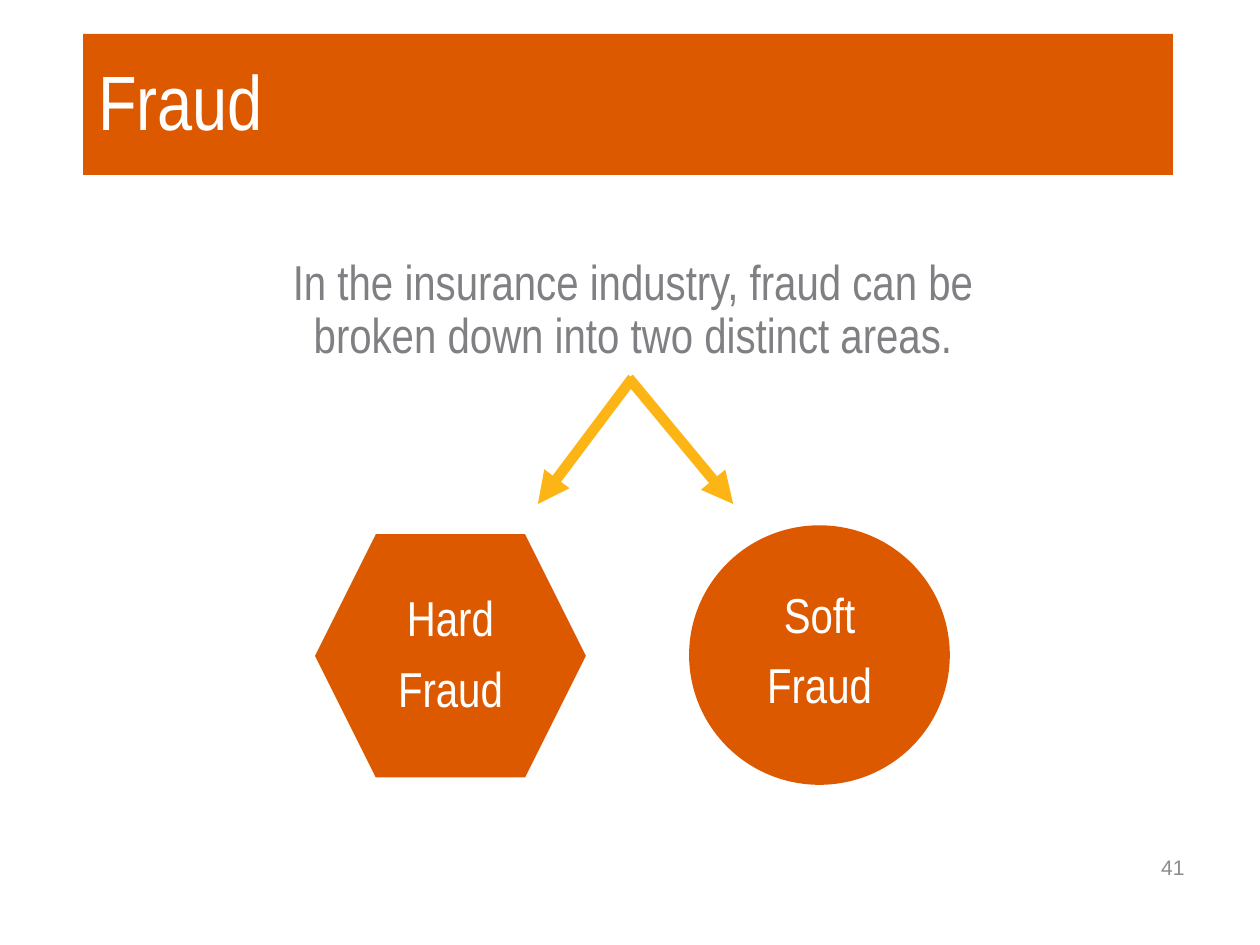
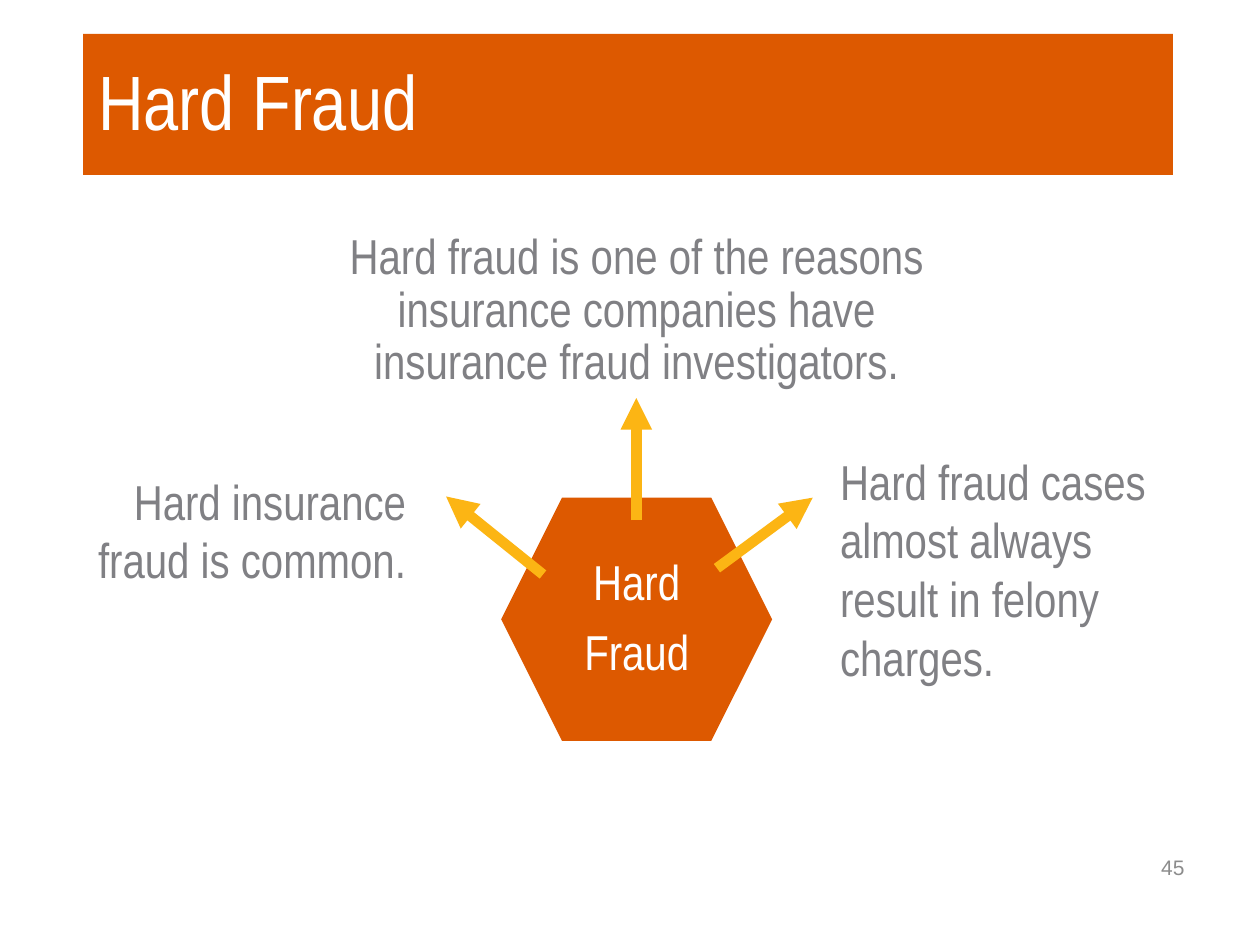
"""Build two slides on insurance fraud: its two areas, and hard fraud in detail."""
from lxml.etree import SubElement
from pptx import Presentation
from pptx.dml.color import RGBColor
from pptx.enum.shapes import MSO_CONNECTOR as Connector, MSO_SHAPE as Shape
from pptx.enum.text import MSO_ANCHOR as Anchor, PP_ALIGN as Align
from pptx.oxml.ns import qn
from pptx.util import Pt

ORANGE = RGBColor(0xDD, 0x59, 0x00)
GOLD = RGBColor(0xFC, 0xB5, 0x14)
GREY = RGBColor(0x80, 0x80, 0x84)
PALE_GREY = RGBColor(0x8C, 0x8C, 0x8C)
WHITE = RGBColor(0xFF, 0xFF, 0xFF)

BAND = (47.5, 19.4, 622.8, 80.6)
TITLE = (49, 11.5, 620.6, 98)
PAGE_NUMBER = (516.2, 481, 167.8, 28.8)
HEXAGON_SIZE = (154.8, 139)
CIRCLE_SIZE = (149, 148.3)
LABEL_SIZE = (185.8, 81.4)
BOTTOM = 2

SLIDES = [
    {
        "title": "Fraud",
        "number": "41",
        "lead": "In the insurance industry, fraud can be broken down into two distinct areas.",
        "lead_area": (135.4, 144, 452.2, 81.4),
        "figures": [
            (Shape.HEXAGON, (180, 305.3), HEXAGON_SIZE, ["Hard", "Fraud"], 336.2),
            (Shape.OVAL, (393.8, 300.2), CIRCLE_SIZE, ["Soft", "Fraud"], 334.1),
        ],
        "arrows": [((359.3, 216), (419, 288)), ((361.4, 216), (307.4, 288))],
        "arrow_to_lead": None,
        "notes": [],
    },
    {
        "title": "Hard Fraud",
        "number": "45",
        "lead": "Hard fraud is one of the reasons insurance companies have "
                "insurance fraud investigators.",
        "lead_area": (169.9, 128.9, 387.4, 98.6),
        "figures": [
            (Shape.HEXAGON, (286.4, 284.4), HEXAGON_SIZE, ["Hard", "Fraud"], 315.4),
        ],
        "arrows": [((409.7, 324.7), (464.4, 284.4)), ((310.3, 328.3), (254.9, 283.7))],
        "arrow_to_lead": (363.6, 297.4),
        "notes": [
            ("Hard fraud cases almost always result in felony charges.",
             (473, 254.2, 208, 143.3), Align.LEFT),
            ("Hard insurance fraud is common.", (40.3, 265.7, 198.7, 74.9), Align.RIGHT),
        ],
    },
]


def points(values):
    return [Pt(value) for value in values]


def add_text(slide, paragraphs, area, size=28, color=GREY, font="Arial Narrow",
             align=Align.CENTER, anchor=Anchor.TOP, spacing=0.9):
    box = slide.shapes.add_textbox(*points(area))
    frame = box.text_frame
    frame.word_wrap = True
    frame.vertical_anchor = anchor
    for index, text in enumerate(paragraphs):
        para = frame.paragraphs[0] if index == 0 else frame.add_paragraph()
        para.alignment = align
        para.line_spacing = spacing
        if index:
            para.space_before = Pt(10)
        span = para.add_run()
        span.text = text
        span.font.name = font
        span.font.size = Pt(size)
        span.font.color.rgb = color
    return box


def add_figure(slide, kind, area):
    figure = slide.shapes.add_shape(kind, *points(area))
    figure.shadow.inherit = False
    figure.fill.solid()
    figure.fill.fore_color.rgb = ORANGE
    figure.line.fill.background()


def add_arrow(slide, start, end):
    arrow = slide.shapes.add_connector(Connector.STRAIGHT, *points(start + end))
    arrow.line.color.rgb = GOLD
    arrow.line.width = Pt(6)
    SubElement(arrow.line._get_or_add_ln(), qn("a:tailEnd"), type="triangle")
    SubElement(arrow._element.spPr, qn("a:effectLst"))
    return arrow


def add_frame(slide, title, number):
    add_figure(slide, Shape.RECTANGLE, BAND)
    add_text(slide, [number], PAGE_NUMBER, size=12, color=PALE_GREY, font="Arial",
             align=Align.RIGHT, anchor=Anchor.MIDDLE, spacing=1.0)
    add_text(slide, [title], TITLE, size=44, color=WHITE, align=Align.LEFT,
             anchor=Anchor.MIDDLE)


def build_slide(deck, content):
    slide = deck.slides.add_slide(deck.slide_layouts[6])
    add_frame(slide, content["title"], content["number"])
    lead = add_text(slide, [content["lead"]], content["lead_area"])
    for kind, corner, size, label, label_top in content["figures"]:
        add_figure(slide, kind, corner + size)
        label_left = corner[0] + (size[0] - LABEL_SIZE[0]) / 2
        add_text(slide, label, (label_left, label_top) + LABEL_SIZE, color=WHITE)
    for start, end in content["arrows"]:
        add_arrow(slide, start, end)
    if content["arrow_to_lead"]:
        start = content["arrow_to_lead"]
        add_arrow(slide, start, start).end_connect(lead, BOTTOM)
    for text, area, align in content["notes"]:
        add_text(slide, [text], area, align=align, spacing=1.0)


def main():
    deck = Presentation()
    deck.slide_width, deck.slide_height = Pt(720), Pt(540)
    for content in SLIDES:
        build_slide(deck, content)
    deck.save("out.pptx")


if __name__ == "__main__":
    main()
